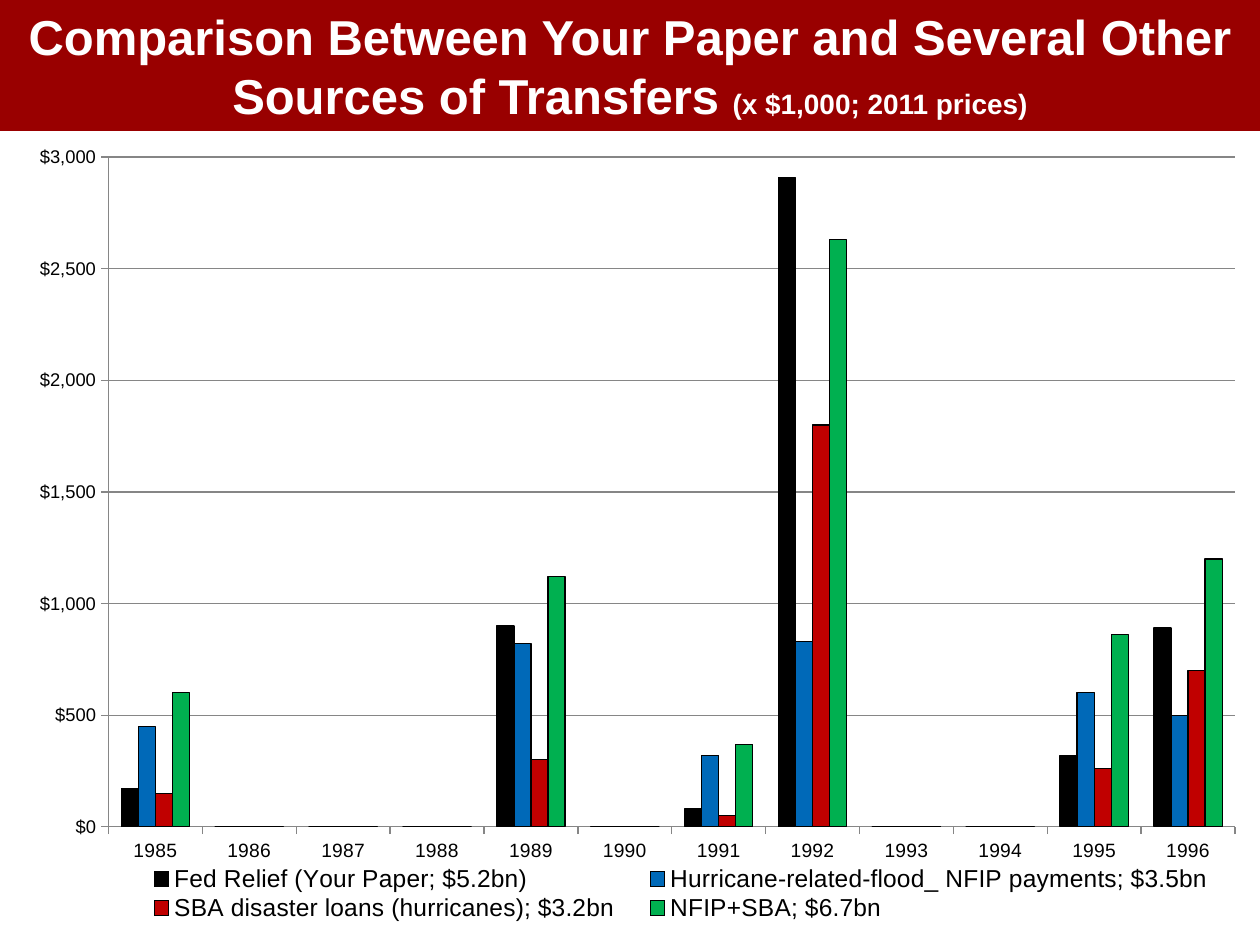
from lxml import etree
from pptx import Presentation
from pptx.chart.data import CategoryChartData
from pptx.dml.color import RGBColor
from pptx.enum.chart import XL_CHART_TYPE, XL_LEGEND_POSITION, XL_TICK_MARK
from pptx.enum.shapes import MSO_SHAPE
from pptx.enum.text import MSO_ANCHOR, PP_ALIGN
from pptx.oxml.ns import qn
from pptx.util import Inches, Pt

COLUMNS = XL_CHART_TYPE.COLUMN_CLUSTERED
BOTTOM = XL_LEGEND_POSITION.BOTTOM
OUTSIDE = XL_TICK_MARK.OUTSIDE
NO_TICK = XL_TICK_MARK.NONE

TITLE = "Comparison Between Your Paper and Several Other Sources of Transfers "
UNITS = "(x $1,000; 2011 prices)"
YEARS = [str(year) for year in range(1985, 1997)]
# name, fill, amounts in the years with transfers
SERIES = [
    ("Fed Relief (Your Paper; $5.2bn)", "000000",
     [170, 0, 0, 0, 900, 0, 80, 2910, 0, 0, 320, 890]),
    ("Hurricane-related-flood_ NFIP payments; $3.5bn", "0069B8",
     [450, 0, 0, 0, 820, 0, 320, 830, 0, 0, 600, 500]),
    ("SBA disaster loans (hurricanes); $3.2bn", "C00000",
     [150, 0, 0, 0, 300, 0, 50, 1800, 0, 0, 260, 700]),
    ("NFIP+SBA; $6.7bn", "00B050",
     [600, 0, 0, 0, 1120, 0, 370, 2630, 0, 0, 860, 1200]),
]

THEME = {
    "font": "Arial", "banner": "990000", "title": "FFFFFF", "ink": "000000",
    "grid": "868686", "title_size": 28, "units_size": 16, "chart_size": 10,
    "year_size": 11, "amount_size": 10.5, "legend_size": 14,
}
WIDTH, HEIGHT = 10, 7.5
BANNER_HEIGHT = 1.04
CHART_BOX = (0.12, BANNER_HEIGHT, WIDTH - 0.12, 6.29)
# shares of the chart: left, top, width, height
PLOT_SHARE = (0.075, 0.033, 0.905, 0.845)
LEGEND_SHARE = (0.09, 0.925, 0.89, 0.075)


def color(name):
    return RGBColor.from_string(THEME.get(name, name))


def style_font(font, size, ink="ink", bold=False):
    font.name = THEME["font"]
    font.size = Pt(THEME[size])
    font.bold = bold
    font.color.rgb = color(ink)


def add_text(para, text, **style):
    span = para.add_run()
    span.text = text
    style_font(span.font, **style)


def set_layout(parent, index, shares, inner=False):
    """Place a chart part by hand, in shares of the chart."""
    for old in parent.findall(qn("c:layout")):
        parent.remove(old)
    layout = etree.Element(qn("c:layout"))
    manual = etree.SubElement(layout, qn("c:manualLayout"))
    values = [("layoutTarget", "inner")] if inner else []
    values += [("xMode", "edge"), ("yMode", "edge")]
    values += zip("xywh", shares)
    for tag, value in values:
        etree.SubElement(manual, qn("c:" + tag)).set("val", str(value))
    parent.insert(index, layout)


def add_banner(page):
    banner = page.shapes.add_shape(
        MSO_SHAPE.RECTANGLE, 0, 0, Inches(WIDTH), Inches(BANNER_HEIGHT))
    banner.shadow.inherit = False
    banner.fill.solid()
    banner.fill.fore_color.rgb = color("banner")
    banner.line.fill.background()
    frame = banner.text_frame
    frame.word_wrap = True
    frame.vertical_anchor = MSO_ANCHOR.MIDDLE
    para = frame.paragraphs[0]
    para.alignment = PP_ALIGN.CENTER
    add_text(para, TITLE, size="title_size", ink="title", bold=True)
    add_text(para, UNITS, size="units_size", ink="title", bold=True)


def style_axis(axis, size):
    axis.major_tick_mark = OUTSIDE
    axis.minor_tick_mark = NO_TICK
    axis.format.line.color.rgb = color("grid")
    axis.format.line.width = Pt(0.75)
    style_font(axis.tick_labels.font, size)


def add_transfers(page):
    data = CategoryChartData()
    data.categories = YEARS
    for name, _, amounts in SERIES:
        data.add_series(name, amounts)
    chart = page.shapes.add_chart(COLUMNS, *map(Inches, CHART_BOX), data).chart
    chart.has_title = False
    style_font(chart.font, "chart_size")

    plot = chart.plots[0]
    plot.gap_width = 150
    plot.overlap = 0
    plot.vary_by_categories = False
    for series, (_, fill, _) in zip(plot.series, SERIES):
        series.format.fill.solid()
        series.format.fill.fore_color.rgb = color(fill)
        series.format.line.color.rgb = color("ink")
        series.format.line.width = Pt(0.75)

    style_axis(chart.category_axis, "year_size")
    amounts = chart.value_axis
    style_axis(amounts, "amount_size")
    amounts.minimum_scale, amounts.maximum_scale = 0, 3000
    amounts.major_unit = 500
    amounts.tick_labels.number_format = '"$"#,##0'
    amounts.tick_labels.number_format_is_linked = False
    amounts.has_major_gridlines = True
    amounts.major_gridlines.format.line.color.rgb = color("grid")
    amounts.major_gridlines.format.line.width = Pt(0.75)

    chart.has_legend = True
    legend = chart.legend
    legend.position = BOTTOM
    legend.include_in_layout = False
    style_font(legend.font, "legend_size")

    root = chart.element
    set_layout(root.find(".//" + qn("c:plotArea")), 0, PLOT_SHARE, inner=True)
    set_layout(root.find(".//" + qn("c:legend")), 1, LEGEND_SHARE)


def main():
    deck = Presentation()
    deck.slide_width, deck.slide_height = Inches(WIDTH), Inches(HEIGHT)
    page = deck.slides.add_slide(deck.slide_layouts[6])
    add_banner(page)
    add_transfers(page)
    deck.save("out.pptx")


if __name__ == "__main__":
    main()
